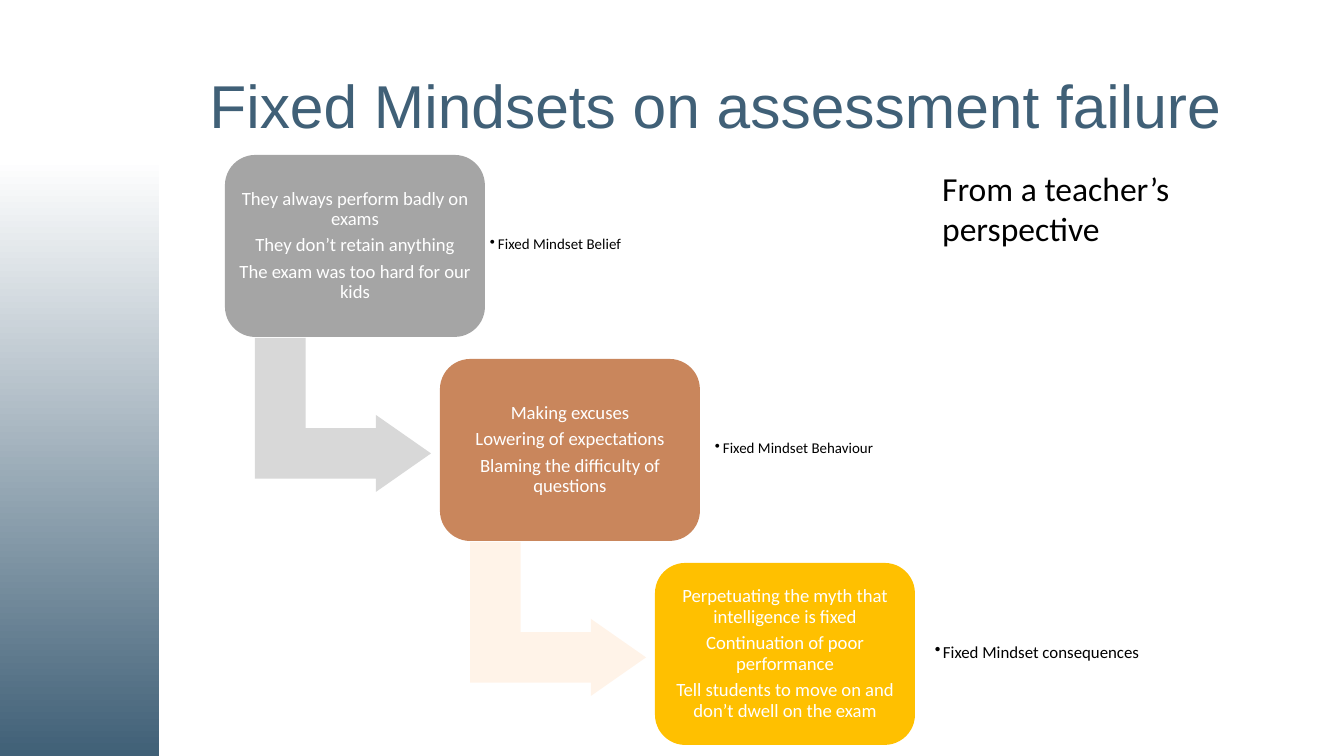
from dataclasses import dataclass

from lxml.etree import SubElement
from pptx import Presentation
from pptx.dml.color import RGBColor
from pptx.enum.shapes import MSO_SHAPE as Shape
from pptx.enum.text import MSO_ANCHOR as Anchor, PP_ALIGN as Align
from pptx.oxml.ns import qn
from pptx.util import Emu, Pt


@dataclass(frozen=True)
class Theme:
    navy: str = "406077"
    white: str = "FFFFFF"
    black: str = "000000"
    boxes: tuple = ("A5A5A5", "C9865C", "FFC000")
    arrows: tuple = ("D8D8D8", "FFF3E8")
    heading: str = "Arial"
    body: str = "Calibri"
    title_size: float = 32.4
    aside_size: float = 18
    box_size: float = 10
    label_sizes: tuple = (8, 8, 9)


theme = Theme()
EMU_PER_PX = 914400 / 134.4


def px(*lengths):
    return [Emu(round(length * EMU_PER_PX)) for length in lengths]


def write(shape, lines, size, color, font=theme.body, align=Align.LEFT,
          anchor=Anchor.MIDDLE, inset=None, spacing=0.9, after=0, bullet=False):
    """Fill a shape with one paragraph per line; inset and after are px and points."""
    frame = shape.text_frame
    frame.word_wrap = True
    frame.vertical_anchor = anchor
    if inset is not None:
        margin, = px(inset)
        frame.margin_left = frame.margin_right = margin
        frame.margin_top = frame.margin_bottom = margin
    for index, line in enumerate(lines):
        paragraph = frame.add_paragraph() if index else frame.paragraphs[0]
        if bullet:
            hanging, = px(8)
            properties = paragraph._p.get_or_add_pPr()
            properties.set("marL", str(hanging))
            properties.set("indent", str(-hanging))
            SubElement(properties, qn("a:buChar")).set("char", "•")
        paragraph.alignment = align
        paragraph.line_spacing = spacing
        paragraph.space_after = Pt(after)
        run = paragraph.add_run()
        run.text = line
        run.font.size = Pt(size)
        run.font.name = font
        run.font.color.rgb = RGBColor.from_string(color)


presentation = Presentation()
presentation.slide_width, presentation.slide_height = px(1344, 756)
slide = presentation.slides.add_slide(presentation.slide_layouts[5])
shapes = slide.shapes

# Side band fading upwards
band = shapes.add_shape(Shape.RECTANGLE, *px(0, 0, 159, 756))
band.shadow.inherit = False
band.line.fill.background()
band.fill.gradient()
band.fill.gradient_angle = 90
for stop, color, position in zip(band.fill.gradient_stops,
                                 (theme.navy, theme.white), (0, 0.79)):
    stop.color.rgb = RGBColor.from_string(color)
    stop.position = position

title = shapes.title
title.left, title.top, title.width, title.height = px(196, 40, 1095, 138)
write(title, ["Fixed Mindsets on assessment failure"], theme.title_size,
      theme.navy, font=theme.heading)

# Staircase: each step moves right and down by the same amount
BOX_LEFT, BOX_TOP, BOX_WIDTH, BOX_HEIGHT = 225, 155, 260, 182
STEP_X, STEP_Y = 215, 204
steps = [
    (["They always perform badly on exams", "They don’t retain anything",
      "The exam was too hard for our kids"],
     "Fixed Mindset Belief", 485, 190),
    (["Making excuses", "Lowering of expectations",
      "Blaming the difficulty of questions"],
     "Fixed Mindset Behaviour", 710, 323),
    (["Perpetuating the myth that intelligence is fixed",
      "Continuation of poor performance",
      "Tell students to move on and don’t dwell on the exam"],
     "Fixed Mindset consequences", 930, 250),
]
for index, (lines, label, label_left, label_width) in enumerate(steps):
    left = BOX_LEFT + index * STEP_X
    top = BOX_TOP + index * STEP_Y
    parts = []
    if index < len(theme.arrows):
        arrow = shapes.add_shape(Shape.BENT_UP_ARROW,
                                 *px(left + 41, top + 172, 154, 176))
        arrow.rotation = 90
        for number, value in enumerate((0.328, 0.25, 0.358)):
            arrow.adjustments[number] = value
        parts.append((arrow, theme.arrows[index]))
    box = shapes.add_shape(Shape.ROUNDED_RECTANGLE,
                           *px(left, top, BOX_WIDTH, BOX_HEIGHT))
    parts.append((box, theme.boxes[index]))
    for shape, color in parts:
        shape.shadow.inherit = False
        shape.line.fill.background()
        shape.fill.solid()
        shape.fill.fore_color.rgb = RGBColor.from_string(color)
    write(box, lines, theme.box_size, theme.white, align=Align.CENTER,
          inset=5, after=3.5)
    label_box = shapes.add_textbox(*px(label_left, top + 17, label_width, 146))
    write(label_box, [label], theme.label_sizes[index], theme.black,
          inset=5, after=1, bullet=True)

aside = shapes.add_textbox(*px(929, 161, 363, 95))
write(aside, ["From a teacher’s perspective"], theme.aside_size, theme.black,
      anchor=Anchor.TOP, spacing=1)

presentation.save("out.pptx")
